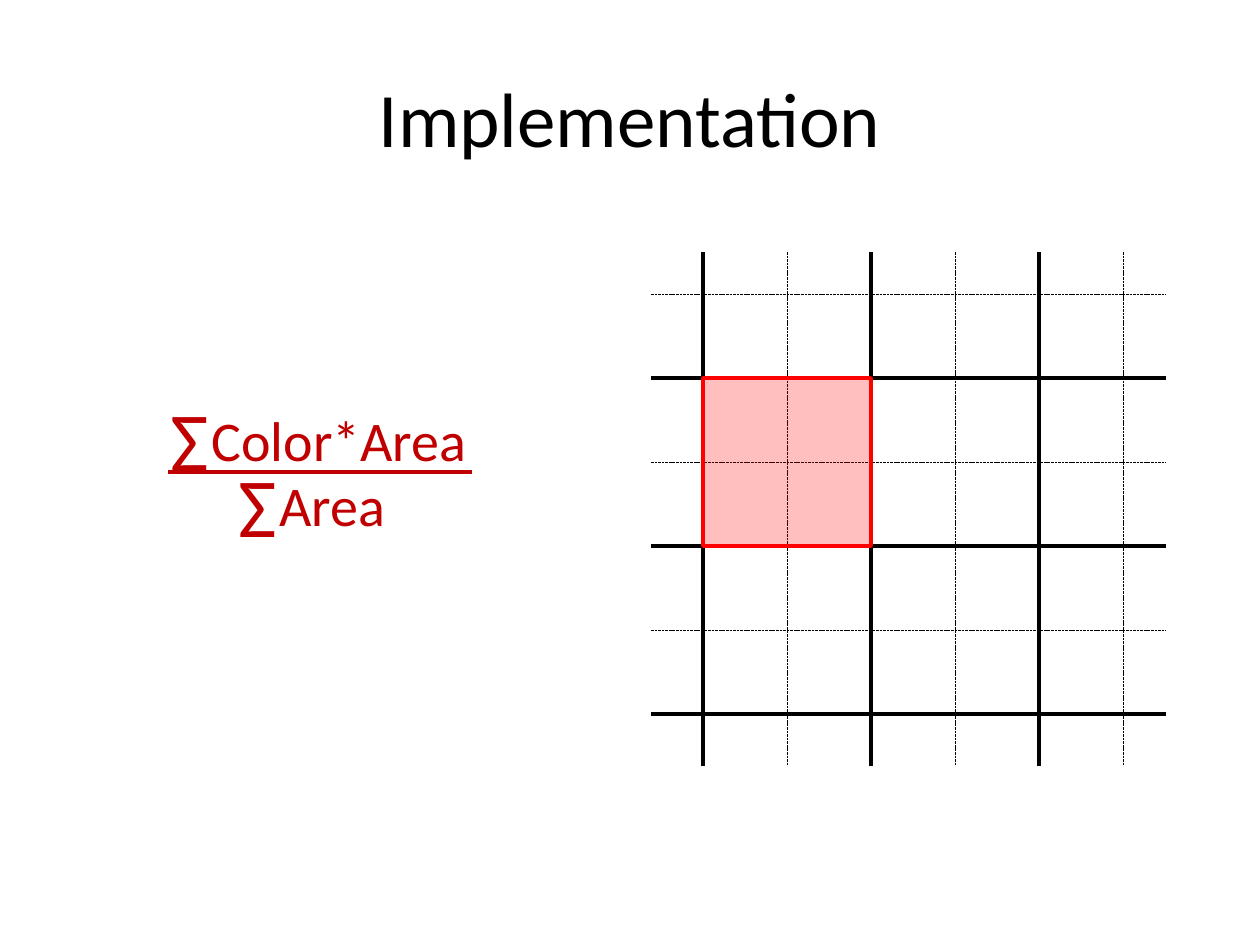
from dataclasses import dataclass
from typing import Optional

from lxml.etree import SubElement
from pptx import Presentation
from pptx.dml.color import RGBColor
from pptx.enum.dml import MSO_LINE_DASH_STYLE as Dash
from pptx.enum.shapes import MSO_CONNECTOR as Connector, MSO_SHAPE as Shape
from pptx.enum.text import MSO_ANCHOR as Anchor, MSO_AUTO_SIZE as AutoSize, PP_ALIGN as Align
from pptx.oxml.ns import qn
from pptx.util import Emu, Pt

EMU_PER_PX = 914400 / 126
FONT = "Calibri"
BLACK, RED, DARK_RED = "000000", "FF0000", "C00000"
LEFT, RIGHT, TOP, BOTTOM = 651, 1166, 252, 766
FIRST_X, FIRST_Y, HALF_CELL, LINE_COUNT = 703, 294, 84, 6


@dataclass(frozen=True)
class Stroke:
    color: str
    points: float
    dash: Optional[Dash] = None


@dataclass(frozen=True)
class Label:
    text: str
    left: int
    top: int
    width: int
    height: int
    size: int


SOLID = Stroke(BLACK, 2)
DASHED = Stroke(BLACK, 0.5, Dash.SQUARE_DOT)
FRACTION_BAR = Stroke(DARK_RED, 2.5)
LABELS = [
    Label("Color*Area", 199, 399, 284, 81, 32),
    Label("Σ", 158, 381, 64, 115, 48),
    Label("Area", 267, 464, 132, 81, 32),
    Label("Σ", 226, 447, 64, 115, 48),
]


def px(length: int) -> Emu:
    return Emu(round(length * EMU_PER_PX))


def rgb(color: str) -> RGBColor:
    return RGBColor.from_string(color)


def format_para(para, size: int, color: str) -> None:
    para.font.name = FONT
    para.font.size = Pt(size)
    para.font.color.rgb = rgb(color)


def apply_stroke(line, stroke: Stroke) -> None:
    line.color.rgb = rgb(stroke.color)
    line.width = Pt(stroke.points)
    if stroke.dash is not None:
        line.dash_style = stroke.dash


def draw_line(shapes, x1: int, y1: int, x2: int, y2: int, stroke: Stroke) -> None:
    connector = shapes.add_connector(Connector.STRAIGHT, px(x1), px(y1), px(x2), px(y2))
    apply_stroke(connector.line, stroke)
    SubElement(connector._element.spPr, qn("a:effectLst"))


def draw_grid(shapes, columns: list[int], rows: list[int], stroke: Stroke) -> None:
    group = shapes.add_group_shape()
    for y in rows:
        draw_line(group.shapes, LEFT, y, RIGHT, y, stroke)
    for x in columns:
        draw_line(group.shapes, x, TOP, x, BOTTOM, stroke)


def draw_cell(shapes, left: int, top: int, side: int) -> None:
    cell = shapes.add_shape(Shape.RECTANGLE, px(left), px(top), px(side), px(side))
    cell.shadow.inherit = False
    cell.fill.solid()
    cell.fill.fore_color.rgb = rgb(RED)
    color = cell._element.spPr.find(qn("a:solidFill")).find(qn("a:srgbClr"))
    SubElement(color, qn("a:alpha"), val="25000")
    apply_stroke(cell.line, Stroke(RED, 2))


def draw_label(shapes, label: Label) -> None:
    box = shapes.add_textbox(px(label.left), px(label.top), px(label.width), px(label.height))
    box.text_frame.word_wrap = False
    box.text_frame.auto_size = AutoSize.SHAPE_TO_FIT_TEXT
    para = box.text_frame.paragraphs[0]
    para.text = label.text
    format_para(para, label.size, DARK_RED)


def set_title(title, text: str) -> None:
    title.left, title.top, title.width, title.height = px(63), px(38), px(1134), px(158)
    title.text_frame.vertical_anchor = Anchor.MIDDLE
    para = title.text_frame.paragraphs[0]
    para.text = text
    para.alignment = Align.CENTER
    format_para(para, 44, BLACK)


def main() -> None:
    deck = Presentation()
    deck.slide_width, deck.slide_height = px(1260), px(945)
    page = deck.slides.add_slide(deck.slide_layouts[5])
    set_title(page.shapes.title, "Implementation")

    columns = [FIRST_X + HALF_CELL * i for i in range(LINE_COUNT)]
    rows = [FIRST_Y + HALF_CELL * i for i in range(LINE_COUNT)]
    draw_grid(page.shapes, columns[::2], rows[1::2], SOLID)
    draw_grid(page.shapes, columns, rows, DASHED)
    draw_cell(page.shapes, columns[0], rows[1], 2 * HALF_CELL)

    draw_line(page.shapes, 168, 472, 472, 472, FRACTION_BAR)
    for label in LABELS:
        draw_label(page.shapes, label)
    deck.save("out.pptx")


if __name__ == "__main__":
    main()
